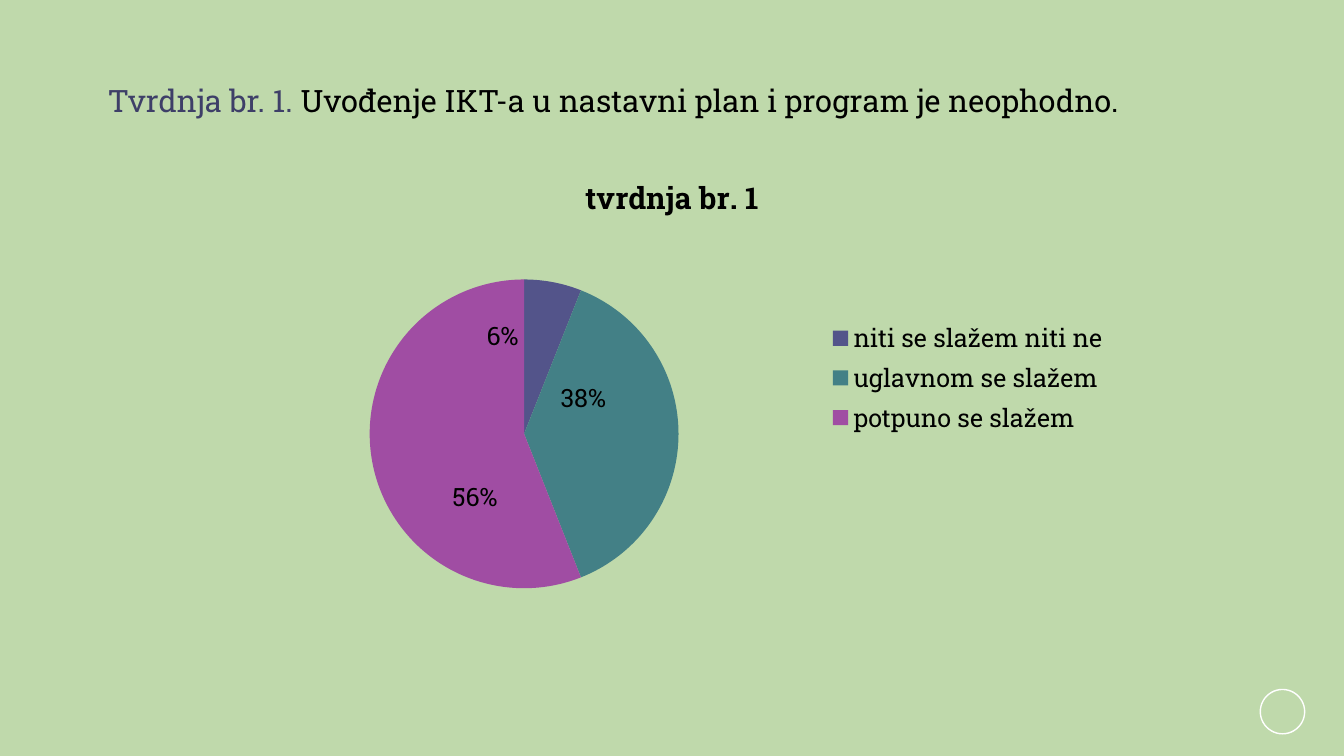
from lxml.etree import SubElement
from pptx import Presentation
from pptx.chart.data import CategoryChartData
from pptx.dml.color import RGBColor
from pptx.enum.chart import XL_CHART_TYPE, XL_LABEL_POSITION, XL_LEGEND_POSITION
from pptx.enum.shapes import MSO_SHAPE
from pptx.enum.text import MSO_ANCHOR, PP_ALIGN
from pptx.oxml.ns import qn
from pptx.util import Inches, Pt

FONT = "Roboto Slab"
COLORS = {"background": "BFD9AB", "accent": "3E3F68", "text": "000000", "ring": "FFFFFF"}
TITLE_RUNS = [
    ("Tvrdnja br. 1. ", "accent"),
    ("Uvođenje IKT-a u nastavni plan i program je neophodno.", "text"),
]
CHART_TITLE = "tvrdnja br. 1"
# answer, percent, slice colour, label shift as shares of the chart
ANSWERS = [
    ("niti se slažem niti ne", 6, "53548A", (-0.04, -0.05)),
    ("uglavnom se slažem", 38, "438086", (-0.02, -0.08)),
    ("potpuno se slažem", 56, "A04DA3", (0.03, 0.11)),
]
# left, top, width, height as shares of the chart
PLOT_AREA = (0.16, 0.28, 0.35, 0.69)
LEGEND_AREA = (0.67, 0.36, 0.32, 0.28)


def color(name):
    return RGBColor.from_string(COLORS[name])


def set_layout(parent, settings, position):
    """Give a chart part a manual layout, placed at the given child index."""
    for old in parent.findall(qn("c:layout")):
        parent.remove(old)
    layout = SubElement(parent, qn("c:layout"))
    parent.insert(position, layout)
    manual = SubElement(layout, qn("c:manualLayout"))
    for tag, value in settings:
        SubElement(manual, qn(f"c:{tag}")).set("val", str(value))


def area_settings(area):
    modes = [("xMode", "edge"), ("yMode", "edge")]
    return modes + list(zip("xywh", area))


def add_title(slide):
    title = slide.shapes.title
    title.left, title.top = Inches(0.97), Inches(0.76)
    title.width, title.height = Inches(10.94), Inches(0.47)
    frame = title.text_frame
    frame.word_wrap = True
    frame.vertical_anchor = MSO_ANCHOR.MIDDLE
    paragraph = frame.paragraphs[0]
    paragraph.alignment = PP_ALIGN.LEFT
    paragraph.font.name, paragraph.font.size = FONT, Pt(22)
    for text, color_name in TITLE_RUNS:
        run = paragraph.add_run()
        run.text = text
        run.font.color.rgb = color(color_name)


def add_pie(slide):
    data = CategoryChartData()
    data.categories = [answer[0] for answer in ANSWERS]
    data.add_series(CHART_TITLE, [answer[1] for answer in ANSWERS])
    chart = slide.shapes.add_chart(
        XL_CHART_TYPE.PIE, Inches(2.22), Inches(1.53), Inches(8.89), Inches(4.44), data
    ).chart
    chart.font.name, chart.font.size = FONT, Pt(18)
    chart.font.color.rgb = color("text")

    chart.has_title = True
    chart.chart_title.text_frame.text = CHART_TITLE
    heading = chart.chart_title.text_frame.paragraphs[0].font
    heading.name, heading.size, heading.bold = FONT, Pt(21.6), True
    heading.color.rgb = color("text")

    chart.has_legend = True
    legend = chart.legend
    legend.position = XL_LEGEND_POSITION.RIGHT
    legend.include_in_layout = False
    set_layout(legend._element, area_settings(LEGEND_AREA), 1)
    plot_settings = [("layoutTarget", "inner")] + area_settings(PLOT_AREA)
    set_layout(chart._chartSpace.chart.plotArea, plot_settings, 0)

    plot = chart.plots[0]
    plot.vary_by_categories = True
    plot.has_data_labels = True
    plot.data_labels.show_percentage = True
    plot.data_labels.show_value = False
    for index, (_, _, slice_color, shift) in enumerate(ANSWERS):
        point = plot.series[0].points[index]
        point.format.fill.solid()
        point.format.fill.fore_color.rgb = RGBColor.from_string(slice_color)
        label = point.data_label
        label.font.name, label.font.size = FONT, Pt(18)
        label.font.color.rgb = color("text")
        label.position = XL_LABEL_POSITION.CENTER
        element = plot.series[0]._element.find(qn("c:dLbls")).findall(qn("c:dLbl"))[index]
        element.find(qn("c:showVal")).set("val", "0")
        element.find(qn("c:showPercent")).set("val", "1")
        set_layout(element, zip("xy", shift), 1)


def add_ring(slide):
    ring = slide.shapes.add_shape(
        MSO_SHAPE.OVAL, Inches(12.5), Inches(6.84), Inches(0.44), Inches(0.44)
    )
    ring.shadow.inherit = False
    ring.fill.background()
    ring.line.color.rgb = color("ring")
    ring.line.width = Pt(1)


def main():
    presentation = Presentation()
    presentation.slide_width, presentation.slide_height = Inches(13.33), Inches(7.5)
    slide = presentation.slides.add_slide(presentation.slide_layouts.get_by_name("Title Only"))
    slide.background.fill.solid()
    slide.background.fill.fore_color.rgb = color("background")
    add_ring(slide)
    add_pie(slide)
    add_title(slide)
    presentation.save("out.pptx")


if __name__ == "__main__":
    main()
